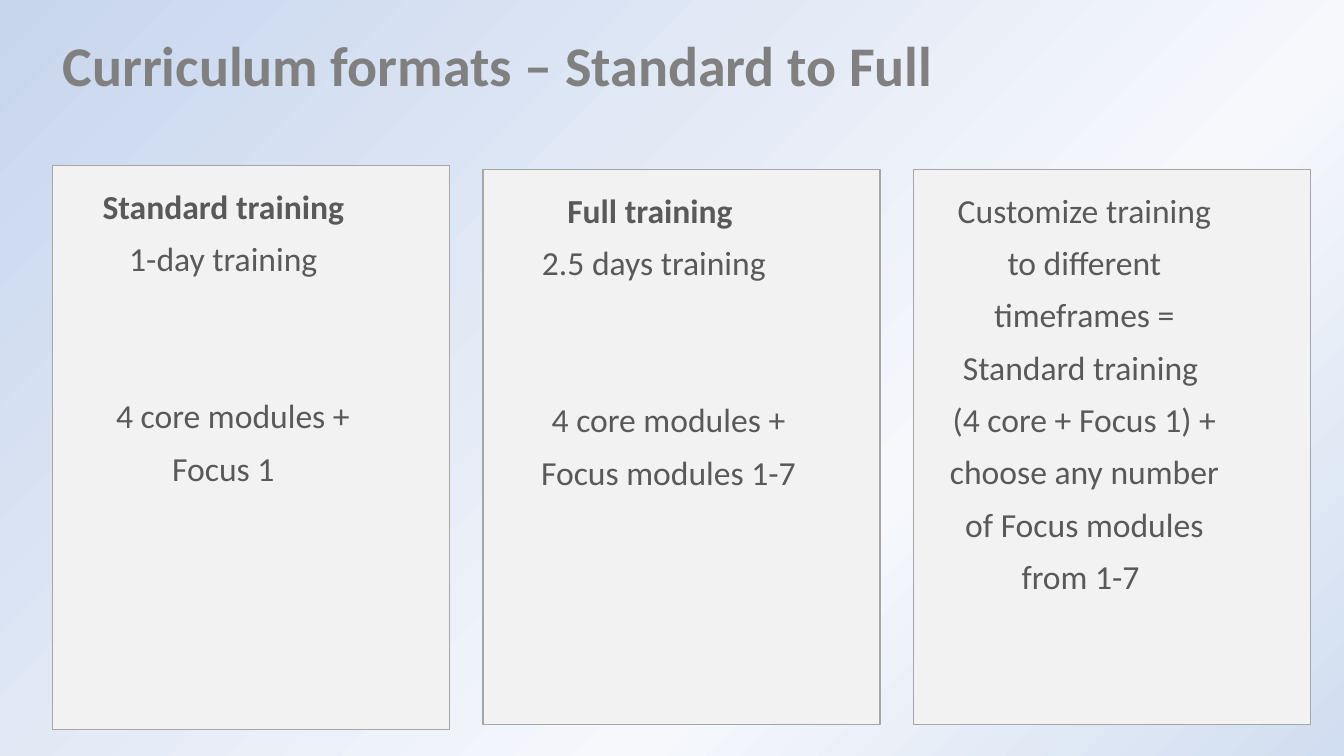
import pptx
import pptx.util
import pptx.oxml
import pptx.oxml.ns
import pptx.dml.color
import pptx.enum.shapes
import pptx.enum.text

Inches, Pt = pptx.util.Inches, pptx.util.Pt
Align = pptx.enum.text.PP_ALIGN
Anchor = pptx.enum.text.MSO_ANCHOR

COLORS = {"title": "808080", "text": "595959", "panel": "F2F2F2", "edge": "A6A6A6"}
STOPS = [(0, "D1DDF0"), (34, "F6F8FC"), (100, "C7D5ED")]

PANELS = [
    (1.64, 5.6, [
        {"text": "Standard training", "bold": True},
        {"text": "1-day training"},
        {"text": "4 core modules + Focus 1", "gap": 75, "first": 0.19}]),
    (1.68, 5.51, [
        {"text": "Full training ", "bold": True},
        {"text": "2.5 days training"},
        {"text": "4 core modules + Focus modules 1-7", "gap": 75, "left": 0.29}]),
    (1.68, 5.51, [
        {"text": "Customize training to different timeframes ="},
        {"text": "Standard training "},
        {"text": "(4 core + Focus 1) + choose any number of Focus modules from 1-7 "}]),
]


class Deck:
    """Holds the style and the current slide."""

    def __init__(self):
        self.font = "Calibri"
        self.prs = pptx.Presentation()
        self.prs.slide_width, self.prs.slide_height = Inches(13.33), Inches(7.5)
        self.slide = self.prs.slides.add_slide(self.prs.slide_layouts[5])

    def color(self, name):
        return pptx.dml.color.RGBColor.from_string(COLORS[name])

    def style(self, para, size, color, bold):
        font = para.font
        font.name, font.size, font.bold = self.font, Pt(size), bold
        font.color.rgb = self.color(color)

    def backdrop(self, stops):
        self.slide.background.fill.gradient()
        old = self.slide.element.xpath(".//p:bgPr/a:gradFill")[0]
        marks = "".join(f'<a:gs pos="{pos * 1000}"><a:srgbClr val="{tint}"/></a:gs>'
                        for pos, tint in stops)
        new = pptx.oxml.parse_xml(
            f'<a:gradFill {pptx.oxml.ns.nsdecls("a")} rotWithShape="1">'
            f'<a:gsLst>{marks}</a:gsLst><a:path path="circle">'
            '<a:fillToRect l="100000" t="100000"/></a:path></a:gradFill>')
        old.getparent().replace(old, new)

    def title(self, text, left, top, width, height):
        shape = self.slide.shapes.title
        shape.left, shape.top = Inches(left), Inches(top)
        shape.width, shape.height = Inches(width), Inches(height)
        frame = shape.text_frame
        frame.text = text
        frame.vertical_anchor = Anchor.TOP
        para = frame.paragraphs[0]
        para.alignment = Align.LEFT
        self.style(para, 40, "title", True)

    def panel(self, left, top, width, height, items):
        shape = self.slide.shapes.add_shape(
            pptx.enum.shapes.MSO_SHAPE.RECTANGLE,
            Inches(left), Inches(top), Inches(width), Inches(height))
        shape.shadow.inherit = False
        shape.fill.solid()
        shape.fill.fore_color.rgb = self.color("panel")
        shape.line.color.rgb = self.color("edge")
        shape.line.width = Pt(1)
        frame = shape.text_frame
        frame.word_wrap = True
        frame.vertical_anchor = Anchor.TOP
        frame.margin_left, frame.margin_right = Inches(0.28), Inches(0.83)
        frame.margin_top, frame.margin_bottom = Inches(0.08), Inches(0.05)
        for num, item in enumerate(items):
            para = frame.add_paragraph() if num else frame.paragraphs[0]
            self.line(para, **item)

    def line(self, para, text, bold=False, gap=0, left=0, first=0):
        para.text = text
        para.alignment = Align.CENTER
        para.line_spacing = 1.3
        para.space_before = Pt(gap)
        props = para._p.get_or_add_pPr()
        props.set("marL", str(Inches(left)))
        props.set("indent", str(Inches(first)))
        self.style(para, 24, "text", bold)


def main():
    deck = Deck()
    deck.backdrop(STOPS)
    deck.title("Curriculum formats – Standard to Full", 0.52, 0.25, 12.48, 0.77)
    for col, (top, height, items) in enumerate(PANELS):
        deck.panel(0.52 + 4.27 * col, top, 3.94, height, items)
    deck.prs.save("out.pptx")


if __name__ == "__main__":
    main()
